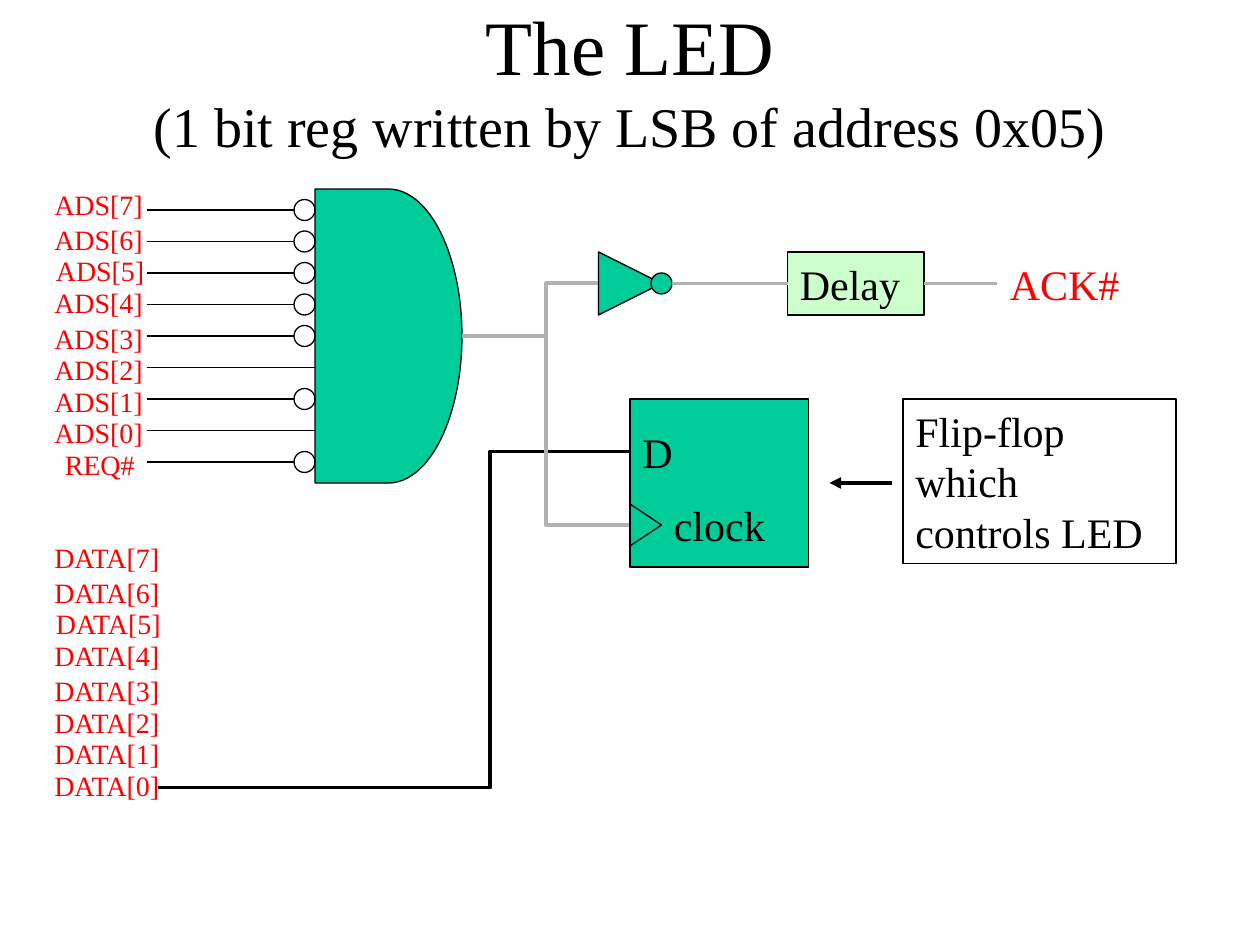
from typing import NamedTuple

from lxml import etree
from pptx import Presentation
from pptx.dml.color import RGBColor
from pptx.enum.shapes import MSO_CONNECTOR, MSO_SHAPE
from pptx.enum.text import MSO_ANCHOR, MSO_AUTO_SIZE, PP_ALIGN
from pptx.oxml.ns import qn
from pptx.util import Cm, Pt

STRAIGHT = MSO_CONNECTOR.STRAIGHT
RECTANGLE, CIRCLE = MSO_SHAPE.RECTANGLE, MSO_SHAPE.OVAL
GATE, TRIANGLE = MSO_SHAPE.FLOWCHART_DELAY, MSO_SHAPE.ISOSCELES_TRIANGLE
TOP, MIDDLE = MSO_ANCHOR.TOP, MSO_ANCHOR.MIDDLE
LEFT, CENTER, RIGHT = PP_ALIGN.LEFT, PP_ALIGN.CENTER, PP_ALIGN.RIGHT
NO_FIT = MSO_AUTO_SIZE.NONE
LEFT_SIDE, RIGHT_SIDE = 1, 3

COLORS = {"ink": "000000", "signal": "FF0000", "logic": "00CC99",
          "delay": "CCFFCC", "wire": "B2B2B2"}
FONT = "Times New Roman"
THIN, THICK = 0.75, 2.25
CELL = 2.54 / 12
DATA_SHIFT = 33.6


class Pin(NamedTuple):
    name: str
    inverted: bool


class Area(NamedTuple):
    left: float
    top: float
    width: float
    height: float


class Spot(NamedTuple):
    left: float
    top: float


PINS = [Pin(f"ADS[{bit}]", bit not in (0, 2)) for bit in range(7, -1, -1)]
PINS.append(Pin("REQ#", True))
LABEL_SPOTS = [Spot(4.15 if row == 2 else 4, top) for row, top in
               enumerate((17.3, 20.6, 23.6, 26.6, 30, 33, 36, 39, 42))]


def grid(cells: float) -> int:
    return Cm(cells * CELL)


def color(name: str) -> RGBColor:
    return RGBColor.from_string(COLORS[name])


def write(shape, text: str, size: int, ink: str = "ink",
          align=LEFT, wrap: bool = True) -> None:
    frame = shape.text_frame
    frame.word_wrap = wrap
    frame.vertical_anchor = TOP
    para = frame.paragraphs[0]
    para.text = text
    para.alignment = align
    para.font.name = FONT
    para.font.size = Pt(size)
    para.font.color.rgb = color(ink)


def add_label(page, area: Area, text: str, size: int, ink: str = "ink",
              align=LEFT, wrap: bool = True) -> None:
    box = page.shapes.add_textbox(*map(grid, area))
    write(box, text, size, ink, align, wrap)


def add_block(page, kind, area: Area, fill: str = "", text: str = ""):
    block = page.shapes.add_shape(kind, *map(grid, area))
    block.shadow.inherit = False
    if fill:
        block.fill.solid()
        block.fill.fore_color.rgb = color(fill)
    else:
        block.fill.background()
    block.line.color.rgb = color("ink")
    block.line.width = Pt(THIN)
    if text:
        write(block, text, 24)
    return block


def add_line(page, start: tuple, end: tuple, ink: str = "ink",
             width: float = THIN):
    line = page.shapes.add_connector(STRAIGHT, *map(grid, start + end))
    line.line.color.rgb = color(ink)
    line.line.width = Pt(width)
    etree.SubElement(line._element.spPr, qn("a:effectLst"))
    return line


def add_wire(page, points: list, ink: str) -> None:
    corners = [(grid(x), grid(y)) for x, y in points]
    builder = page.shapes.build_freeform(*corners[0])
    builder.add_line_segments(corners[1:], close=False)
    wire = builder.convert_to_shape()
    wire.shadow.inherit = False
    wire.fill.background()
    wire.line.color.rgb = color(ink)
    wire.line.width = Pt(THICK)


def add_title(page) -> None:
    title = page.shapes.title
    title.left, title.top, title.width, title.height = map(
        grid, Area(9, 0, 102, 15))
    frame = title.text_frame
    frame.auto_size = NO_FIT
    frame.vertical_anchor = MIDDLE
    para = frame.paragraphs[0]
    para.alignment = CENTER
    para.font.name = FONT
    para.font.color.rgb = color("ink")
    for text, size in (("The LED", 44),
                       ("(1 bit reg written by LSB of address 0x05)", 32)):
        if para.runs:
            para.add_line_break()
        span = para.add_run()
        span.text = text
        span.font.size = Pt(size)


def add_address_gate(page) -> None:
    add_block(page, GATE, Area(30, 18, 14, 28), "logic")
    for row, (pin, spot) in enumerate(zip(PINS, LABEL_SPOTS)):
        level = 20 + 3 * row
        if pin.inverted:
            add_block(page, CIRCLE, Area(28, level - 1, 2, 2))
        add_line(page, (14, level), (28 if pin.inverted else 30, level))
        is_request = pin.name == "REQ#"
        add_label(page, Area(*spot, 10 if is_request else 11, 4.4), pin.name,
                  16, "signal", RIGHT if is_request else LEFT, False)


def add_data_bus(page) -> None:
    for bit, spot in zip(range(7, -1, -1), LABEL_SPOTS):
        area = Area(spot.left, spot.top + DATA_SHIFT, 12.5, 4.4)
        add_label(page, area, f"DATA[{bit}]", 16, "signal", wrap=False)


def add_flip_flop(page) -> None:
    add_block(page, RECTANGLE, Area(86, 38, 26, 15.7),
              text="Flip-flop which controls LED")
    add_block(page, RECTANGLE, Area(60, 38, 17, 16), "logic")
    for level in (48, 52):
        add_line(page, (60, level), (63, 50))
    add_label(page, Area(63, 47, 17, 6), "clock", 24)
    add_label(page, Area(60, 40, 7, 6), "D", 24)
    arrow = add_line(page, (85, 46), (79, 46), width=THICK)
    etree.SubElement(arrow.line._get_or_add_ln(), qn("a:tailEnd"),
                     type="triangle")


def add_acknowledge(page) -> None:
    inverter = add_block(page, TRIANGLE, Area(57, 24, 6, 6), "logic")
    inverter.rotation = 90
    add_wire(page, [(52, 32), (52, 27), (57, 27)], "wire")
    add_block(page, CIRCLE, Area(62, 26, 2, 2), "logic")
    delay = add_block(page, RECTANGLE, Area(75, 24, 13, 6), "delay", "Delay")
    incoming = add_line(page, (64, 27), (75, 27), "wire", THICK)
    incoming.end_connect(delay, LEFT_SIDE)
    outgoing = add_line(page, (88, 27), (95, 27), "wire", THICK)
    outgoing.begin_connect(delay, RIGHT_SIDE)
    add_label(page, Area(95, 24, 13, 6), "ACK#", 24, "signal", wrap=False)


def main() -> None:
    deck = Presentation()
    deck.slide_width, deck.slide_height = Cm(25.4), Cm(19.05)
    page = deck.slides.add_slide(deck.slide_layouts[5])
    add_title(page)
    add_address_gate(page)
    add_wire(page, [(15, 75), (46.7, 75), (46.7, 43), (60, 43)], "ink")
    add_wire(page, [(44, 32), (52, 32), (52, 50), (60, 50)], "wire")
    add_flip_flop(page)
    add_data_bus(page)
    add_acknowledge(page)
    deck.save("out.pptx")


if __name__ == "__main__":
    main()
